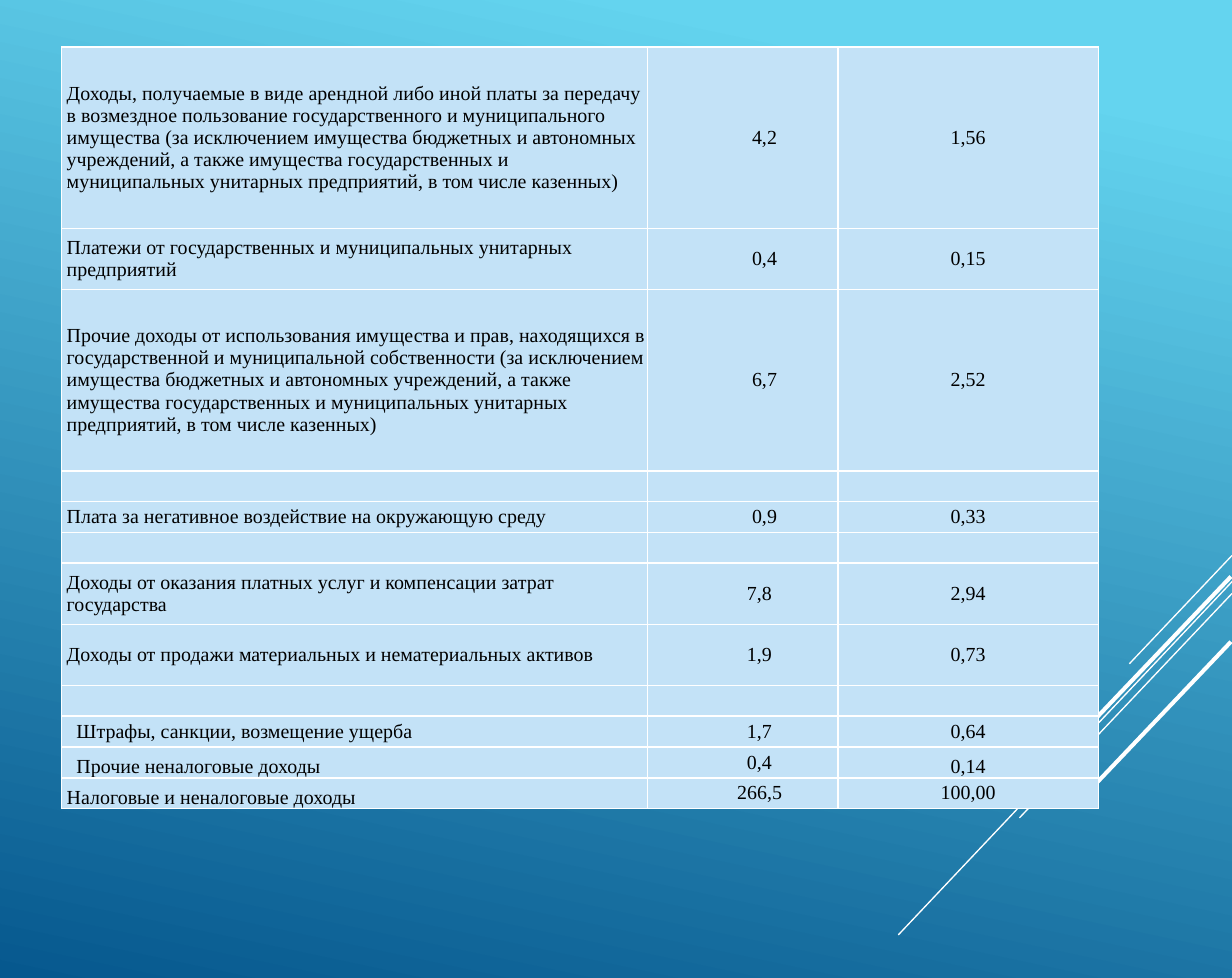
from lxml import etree
from pptx import Presentation
from pptx.dml.color import RGBColor
from pptx.enum.shapes import MSO_CONNECTOR
from pptx.enum.text import MSO_ANCHOR, PP_ALIGN
from pptx.oxml import parse_xml
from pptx.oxml.ns import nsdecls, qn
from pptx.util import Cm, Pt

STRAIGHT = MSO_CONNECTOR.STRAIGHT
MIDDLE, BOTTOM = MSO_ANCHOR.MIDDLE, MSO_ANCHOR.BOTTOM
LEFT, CENTER = PP_ALIGN.LEFT, PP_ALIGN.CENTER

COLORS = {
    "sky": "64D4EF",
    "deep": "06588E",
    "cell": "C3E2F7",
    "line": "FFFFFF",
    "text": "000000",
}
TEXT_FORMAT = {"name": "Times New Roman", "size": Pt(11), "bold": False}
BORDER_WIDTH = Pt(1)

# Start x, start y, end x, end y in centimetres, width in points
DIAGONALS = [
    (24, 10.82, 22, 12.93, 0.75),
    (24, 11.33, 17.5, 18.21, 0.75),
    (24, 11.56, 19.86, 15.93, 0.75),
    (23.98, 11.23, 20.19, 15.21, 2.25),
    (23.98, 12.5, 21.23, 15.39, 2.25),
]

COLUMN_WIDTHS = [11.41, 3.71, 5.08]
TALL, DOUBLE, SINGLE = 3.53, 1.19, 0.6
EMPTY_ROW = (SINGLE, "", "", "", 0, 0, MIDDLE, MIDDLE)

# Height, income source, amount, share, label indent, amount indent,
# label anchor, share anchor
ROWS = [
    (TALL, "Доходы, получаемые в виде арендной либо иной платы за передачу "
     "в возмездное пользование государственного и муниципального имущества "
     "(за исключением имущества бюджетных и автономных учреждений, а также "
     "имущества государственных и муниципальных унитарных предприятий, "
     "в том числе казенных)", "4,2", "1,56", 0.1, 2.04, MIDDLE, MIDDLE),
    (DOUBLE, "Платежи от государственных и муниципальных унитарных предприятий",
     "0,4", "0,15", 0.1, 2.04, MIDDLE, MIDDLE),
    (TALL, "Прочие доходы от использования имущества и прав, находящихся "
     "в государственной и муниципальной собственности (за исключением "
     "имущества бюджетных и автономных учреждений, а также имущества "
     "государственных и муниципальных унитарных предприятий, в том числе "
     "казенных)", "6,7", "2,52", 0.1, 2.04, MIDDLE, MIDDLE),
    EMPTY_ROW,
    (SINGLE, "Плата за негативное воздействие на окружающую среду",
     "0,9", "0,33", 0.1, 2.04, MIDDLE, MIDDLE),
    EMPTY_ROW,
    (DOUBLE, "Доходы от оказания платных услуг и компенсации затрат государства",
     "7,8", "2,94", 0.1, 1.94, MIDDLE, MIDDLE),
    (DOUBLE, "Доходы от продажи материальных и нематериальных активов",
     "1,9", "0,73", 0.1, 1.94, MIDDLE, MIDDLE),
    EMPTY_ROW,
    (SINGLE, "Штрафы, санкции, возмещение ущерба",
     "1,7", "0,64", 0.29, 1.94, MIDDLE, MIDDLE),
    (SINGLE, "Прочие неналоговые доходы",
     "0,4", "0,14", 0.29, 1.94, BOTTOM, BOTTOM),
    (SINGLE, "Налоговые и неналоговые доходы",
     "266,5", "100,00", 0.1, 1.75, BOTTOM, MIDDLE),
]


def add_borders(cell):
    properties = cell._tc.get_or_add_tcPr()
    for position, side in enumerate(("lnL", "lnR", "lnT", "lnB")):
        border = parse_xml(
            f'<a:{side} {nsdecls("a")} w="{BORDER_WIDTH}"><a:solidFill>'
            f'<a:srgbClr val="{COLORS["line"]}"/></a:solidFill></a:{side}>')
        properties.insert(position, border)


def fill_cell(cell, text, align, indent, anchor):
    cell.fill.solid()
    cell.fill.fore_color.rgb = RGBColor.from_string(COLORS["cell"])
    add_borders(cell)
    cell_format = {
        "margin_left": Cm(indent), "margin_right": 0,
        "margin_top": 0, "margin_bottom": 0, "vertical_anchor": anchor,
    }
    for name, value in cell_format.items():
        setattr(cell, name, value)
    para = cell.text_frame.paragraphs[0]
    para.alignment = align
    if text:
        span = para.add_run()
        span.text = text
        for name, value in TEXT_FORMAT.items():
            setattr(span.font, name, value)
        span.font.color.rgb = RGBColor.from_string(COLORS["text"])
    else:
        # Keeps an empty row from growing to the default text size
        etree.SubElement(para._p, qn("a:endParaRPr"), sz="1100")


deck = Presentation()
deck.slide_width, deck.slide_height = Cm(24), Cm(19.05)
page = deck.slides.add_slide(deck.slide_layouts[6])

# Background
backdrop = page.background.fill
backdrop.gradient()
backdrop.gradient_angle = 258
for stop, color, position in zip(backdrop.gradient_stops, ("sky", "deep"), (0.1, 1)):
    stop.color.rgb = RGBColor.from_string(COLORS[color])
    stop.position = position

# Diagonal lines in the corner
for x1, y1, x2, y2, width in DIAGONALS:
    diagonal = page.shapes.add_connector(STRAIGHT, Cm(x1), Cm(y1), Cm(x2), Cm(y2))
    diagonal.line.width = Pt(width)
    diagonal.line.color.rgb = RGBColor.from_string(COLORS["line"])
    etree.SubElement(diagonal._element.spPr, qn("a:effectLst"))

# Income table
income = page.shapes.add_table(
    len(ROWS), len(COLUMN_WIDTHS), Cm(1.2), Cm(0.92),
    Cm(sum(COLUMN_WIDTHS)), Cm(sum(row[0] for row in ROWS))).table
income.first_row = False
income.horz_banding = False
for column, width in zip(income.columns, COLUMN_WIDTHS):
    column.width = Cm(width)

for number, row in enumerate(ROWS):
    height, label, amount, share, label_indent, amount_indent, label_anchor, share_anchor = row
    income.rows[number].height = Cm(height)
    fill_cell(income.cell(number, 0), label, LEFT, label_indent, label_anchor)
    fill_cell(income.cell(number, 1), amount, LEFT, amount_indent, MIDDLE)
    fill_cell(income.cell(number, 2), share, CENTER, 0, share_anchor)

deck.save("out.pptx")
